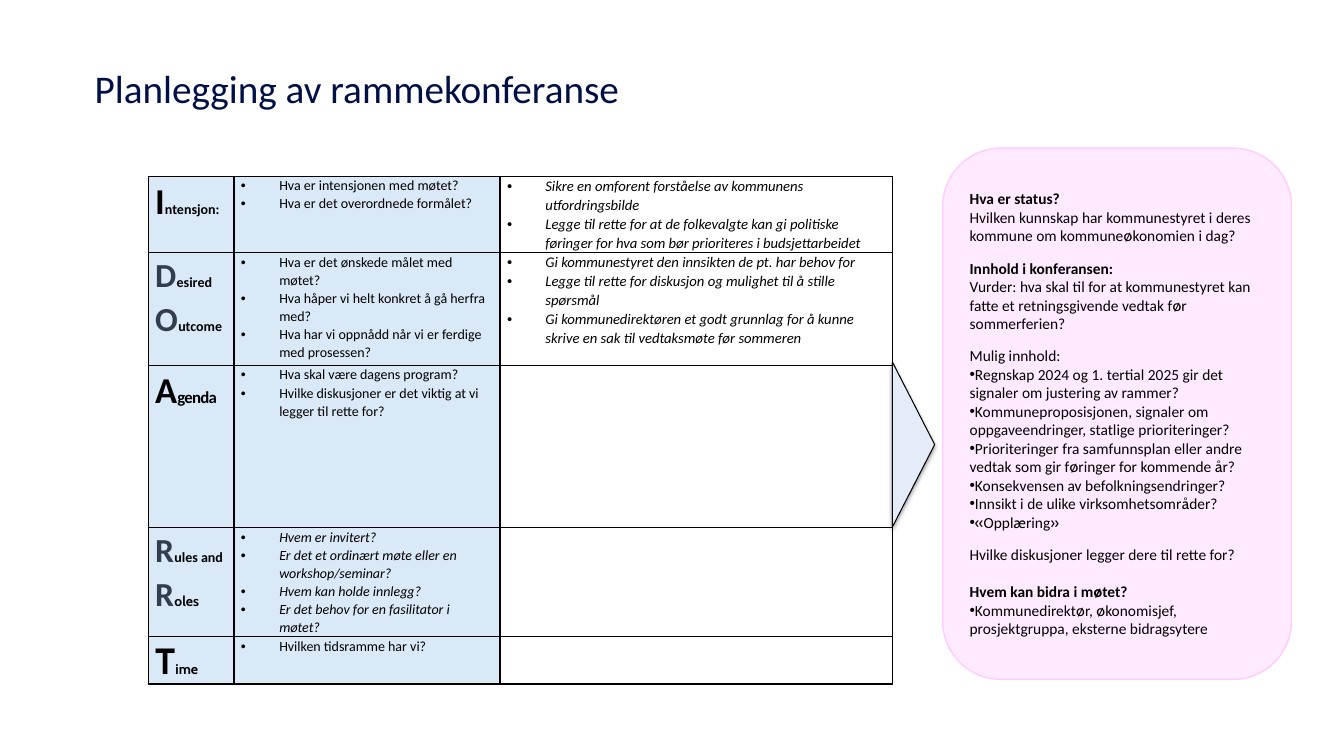
import itertools

import pptx
import pptx.dml.color
import pptx.enum.shapes
import pptx.enum.text
import pptx.oxml
import pptx.oxml.ns
import pptx.util
from pptx.util import Inches

# Content
TITLE = "Planlegging av rammekonferanse"

# Each row: height, heading parts (text, size, colour, font, letter spacing), questions, answers
BLACK, SLATE = "000000", "323E4F"
ROWS = [
    (0.74, [("I", 26, BLACK, "Calibri", -0.5), ("ntensjon:", 10, BLACK, "Calibri", 0)],
     ["Hva er intensjonen med møtet?", "Hva er det overordnede formålet?"],
     ["Sikre en omforent forståelse av kommunens utfordringsbilde",
      "Legge til rette for at de folkevalgte kan gi politiske føringer for hva som bør "
      "prioriteres i budsjettarbeidet"]),
    (1.12, [("D", 24, SLATE, "Calibri", 0.2), ("esired ", 10, BLACK, "Calibri", 0),
            ("O", 24, SLATE, "Calibri", 0.2), ("utcome", 10, BLACK, "Calibri", 0)],
     ["Hva er det ønskede målet med møtet?", "Hva håper vi helt konkret å gå herfra med?",
      "Hva har vi oppnådd når vi er ferdige med prosessen?"],
     ["Gi kommunestyret den innsikten de pt. har behov for",
      "Legge til rette for diskusjon og mulighet til å stille spørsmål",
      "Gi kommunedirektøren et godt grunnlag for å kunne skrive en sak til vedtaksmøte "
      "før sommeren"]),
    (1.61, [("A", 26, BLACK, "Calibri", -0.5), ("genda", 12, BLACK, "Calibri", -0.5)],
     ["Hva skal være dagens program?",
      "Hvilke diskusjoner er det viktig at vi legger til rette for?"], []),
    (0.89, [("R", 24, SLATE, "Calibri", 0.2), ("ules and ", 10, BLACK, "Calibri", 0),
            ("R", 24, SLATE, "Calibri", 0.2), ("oles", 10, BLACK, "Cabin", 0)],
     ["Hvem er invitert?", "Er det et ordinært møte eller en workshop/seminar?",
      "Hvem kan holde innlegg?", "Er det behov for en fasilitator i møtet?"], []),
    (0.47, [("T", 26, BLACK, "Cabin", -0.5), ("ime", 10, BLACK, "Cabin", 0)],
     ["Hvilken tidsramme har vi?"], []),
]
ITALIC_QUESTIONS_ROW = 3
COLUMN_WIDTHS = [0.85, 2.64, 3.89]

# Each panel paragraph: style, space before in points, text
PANEL = [
    ("bold", 0, "Hva er status?"),
    ("plain", 0, "Hvilken kunnskap har kommunestyret i deres kommune om kommuneøkonomien i dag?"),
    ("bold", 9.8, "Innhold i konferansen:"),
    ("plain", 0, "Vurder: hva skal til for at kommunestyret kan fatte et retningsgivende vedtak "
                 "før sommerferien?"),
    ("plain", 9.8, "Mulig innhold:"),
    ("bullet", 0, "Regnskap 2024 og 1. tertial 2025 gir det signaler om justering av rammer?"),
    ("bullet", 0, "Kommuneproposisjonen, signaler om oppgaveendringer, statlige prioriteringer?"),
    ("bullet", 0, "Prioriteringer fra samfunnsplan eller andre vedtak som gir føringer for "
                  "kommende år?"),
    ("bullet", 0, "Konsekvensen av befolkningsendringer?"),
    ("bullet", 0, "Innsikt i de ulike virksomhetsområder?"),
    ("bullet", 0, "«Opplæring»"),
    ("plain", 9.8, "Hvilke diskusjoner legger dere til rette for?"),
    ("bold", 13.4, "Hvem kan bidra i møtet?"),
    ("bullet", 0, "Kommunedirektør, økonomisjef, prosjektgruppa, eksterne bidragsytere"),
]
CABIN_LETTERS = "øåæ«»"


# Helpers
def colour(value):
    return pptx.dml.color.RGBColor.from_string(value)


def xml(text):
    return pptx.oxml.parse_xml(text.replace(" ", f" {pptx.oxml.ns.nsdecls('a')} ", 1))


def add_run(paragraph, text, size, font="Calibri", text_colour=BLACK, bold=False,
            italic=False, spacing=0):
    run = paragraph.add_run()
    run.text = text
    run.font.size = pptx.util.Pt(size)
    run.font.name = font
    run.font.bold = bold
    run.font.italic = italic
    run.font.color.rgb = colour(text_colour)
    if spacing:
        run._r.get_or_add_rPr().set("spc", str(round(spacing * 100)))


def add_bullet(paragraph, indent):
    properties = paragraph._p.get_or_add_pPr()
    properties.set("marL", str(Inches(indent)))
    properties.set("indent", str(-Inches(indent)))
    properties.append(xml('<a:buFont typeface="Arial"/>'))
    properties.append(xml('<a:buChar char="•"/>'))


def paragraphs(text_frame, count):
    return [text_frame.paragraphs[0]] + [text_frame.add_paragraph() for _ in range(count - 1)]


def fill_list(cell, items, size, italic):
    for paragraph, item in zip(paragraphs(cell.text_frame, len(items)), items):
        paragraph.line_spacing = 1.07
        add_bullet(paragraph, 0.38)
        add_run(paragraph, item, size, italic=italic)


def style_cell(cell, fill):
    cell.margin_left = cell.margin_right = Inches(0.07)
    cell.margin_top = cell.margin_bottom = 0
    properties = cell._tc.get_or_add_tcPr()
    for side in ("lnL", "lnR", "lnT", "lnB"):
        properties.append(xml(f'<a:{side} w="12700"><a:solidFill><a:srgbClr val="{BLACK}"/>'
                              f'</a:solidFill></a:{side}>'))
    if fill:
        cell.fill.solid()
        cell.fill.fore_color.rgb = colour(fill)
    else:
        cell.fill.background()


def add_shape(kind, box, fill, line, line_width):
    shape = slide.shapes.add_shape(kind, *map(Inches, box))
    shape.shadow.inherit = False
    shape.fill.solid()
    shape.fill.fore_color.rgb = colour(fill)
    shape.line.color.rgb = colour(line)
    shape.line.width = pptx.util.Pt(line_width)
    return shape


presentation = pptx.Presentation()
presentation.slide_width, presentation.slide_height = Inches(13.33), Inches(7.5)
slide = presentation.slides.add_slide(presentation.slide_layouts[6])

# Planning table
table = slide.shapes.add_table(len(ROWS), len(COLUMN_WIDTHS), Inches(1.47), Inches(1.75),
                               Inches(sum(COLUMN_WIDTHS)),
                               Inches(sum(row[0] for row in ROWS))).table
table.first_row = table.horz_banding = False
for column, width in zip(table.columns, COLUMN_WIDTHS):
    column.width = Inches(width)
for index, (height, heading, questions, answers) in enumerate(ROWS):
    table.rows[index].height = Inches(height)
    heading_cell, question_cell, answer_cell = table.rows[index].cells
    for cell, fill in ((heading_cell, "DAE9F7"), (question_cell, "DAE9F7"), (answer_cell, None)):
        style_cell(cell, fill)
    heading_paragraph = heading_cell.text_frame.paragraphs[0]
    heading_paragraph.line_spacing = 1.07
    for text, size, text_colour, font, spacing in heading:
        add_run(heading_paragraph, text, size, font, text_colour, bold=True, spacing=spacing)
    fill_list(question_cell, questions, 10, index == ITALIC_QUESTIONS_ROW)
    if answers:
        fill_list(answer_cell, answers, 10.5, True)

# Triangle pointing from the agenda to the panel
SHAPES = pptx.enum.shapes.MSO_SHAPE
triangle = add_shape(SHAPES.ISOSCELES_TRIANGLE, (8.24, 4.2, 1.64, 0.42), "E3ECF8", BLACK, 0.75)
triangle.rotation = 90
triangle._element.spPr.find(pptx.oxml.ns.qn("a:effectLst")).append(xml(
    '<a:outerShdw blurRad="39370" dist="20320" dir="5400000" rotWithShape="0">'
    f'<a:srgbClr val="{BLACK}"><a:alpha val="38000"/></a:srgbClr></a:outerShdw>'))

# Panel with the agenda details
panel = add_shape(SHAPES.ROUNDED_RECTANGLE, (9.35, 1.47, 3.46, 5.27), "FFCCFF", "FFCCFF", 1)
panel.adjustments[0] = 0.167
panel.fill._xPr.find(".//" + pptx.oxml.ns.qn("a:srgbClr")).append(xml('<a:alpha val="41000"/>'))
panel.text_frame.word_wrap = True
panel.text_frame.vertical_anchor = pptx.enum.text.MSO_ANCHOR.MIDDLE
for paragraph, (style, gap, text) in zip(paragraphs(panel.text_frame, len(PANEL)), PANEL):
    paragraph.alignment = pptx.enum.text.PP_ALIGN.LEFT
    if gap:
        paragraph.space_before = pptx.util.Pt(gap)
    if style == "bullet":
        add_bullet(paragraph, 0)
    for special, letters in itertools.groupby(text, lambda letter: letter in CABIN_LETTERS):
        add_run(paragraph, "".join(letters), 11, "Cabin" if special else "Calibri",
                bold=style == "bold")

# Title
title = slide.shapes.add_textbox(Inches(0.84), Inches(0.59), Inches(5.45), Inches(0.88))
title.text_frame.word_wrap = False
add_run(title.text_frame.paragraphs[0], TITLE, 28, text_colour="001046")

presentation.save("out.pptx")
